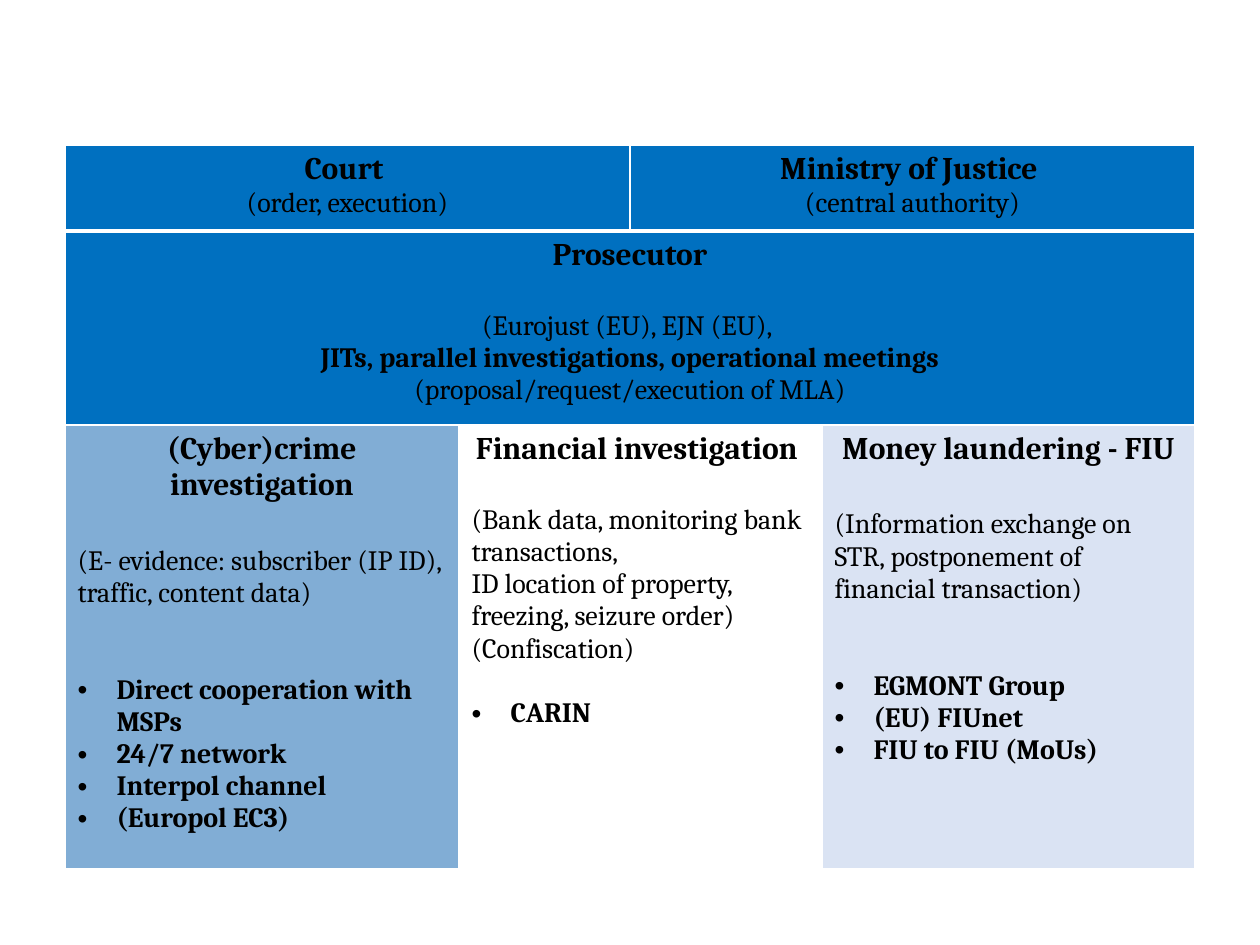
from dataclasses import dataclass

from lxml import etree
from pptx import Presentation
from pptx.dml.color import RGBColor
from pptx.enum.text import PP_ALIGN
from pptx.oxml.ns import qn
from pptx.table import _Cell
from pptx.util import Pt

CENTER, LEFT = PP_ALIGN.CENTER, PP_ALIGN.LEFT
EMU_PER_PX = 914400 / 126
FONT = "Cambria"
BLACK, WHITE = "000000", "FFFFFF"
BLUE, MID_BLUE, PALE_BLUE = "0070C0", "81ADD5", "DAE3F3"
BULLET_INDENT = 39

TABLE_LEFT, TABLE_TOP = 65, 145
COLUMN_WIDTHS = [394, 171, 192, 373]
ROW_HEIGHTS = [86, 194, 444]


@dataclass(frozen=True)
class Line:
    text: str
    size: int = 16
    bold: bool = False
    align: PP_ALIGN = LEFT
    bullet: bool = False
    before: float = 0


@dataclass(frozen=True)
class Block:
    row: int
    first_column: int
    last_column: int
    fill: str | None
    lines: list[Line]


def heading(text: str) -> Line:
    return Line(text, 18, True, CENTER)


def centered(text: str, bold: bool = False, before: float = 0) -> Line:
    return Line(text, bold=bold, align=CENTER, before=before)


def bullet(text: str, before: float = 0) -> Line:
    return Line(text, bold=True, bullet=True, before=before)


BLOCKS = [
    Block(0, 0, 1, BLUE, [heading("Court "), centered("(order, execution)")]),
    Block(0, 2, 3, BLUE, [
        heading("Ministry of Justice "),
        centered("(central authority)"),
    ]),
    Block(1, 0, 3, BLUE, [
        heading("Prosecutor"),
        centered("(Eurojust (EU), EJN (EU), ", before=21),
        centered("JITs, parallel investigations, operational meetings", bold=True),
        centered("(proposal/request/execution of MLA)"),
    ]),
    Block(2, 0, 0, MID_BLUE, [
        heading("(Cyber)crime investigation"),
        Line("(E- evidence: subscriber (IP ID), traffic, content data)", before=23.5),
        bullet("Direct cooperation with MSPs", before=37),
        bullet("24/7 network"),
        bullet("Interpol channel"),
        bullet("(Europol EC3)"),
    ]),
    Block(2, 1, 2, None, [
        heading("Financial investigation "),
        Line("(Bank data, monitoring bank transactions,", before=21),
        Line("ID location of property,"),
        Line("freezing, seizure order)"),
        Line("(Confiscation)"),
        bullet("CARIN", before=18.5),
    ]),
    Block(2, 3, 3, PALE_BLUE, [
        heading("Money laundering - FIU"),
        Line("(Information exchange on STR, postponement of financial transaction)",
             before=23.5),
        bullet("EGMONT Group", before=37),
        bullet("(EU) FIUnet"),
        bullet("FIU to FIU (MoUs)"),
    ]),
]


def px(length: int) -> int:
    return round(length * EMU_PER_PX)


def color(value: str) -> RGBColor:
    return RGBColor.from_string(value)


def add_borders(cell: _Cell, row: int) -> None:
    """Draw thin white borders, with a thick rule under the first row."""
    widths = {"lnL": 1, "lnR": 1, "lnT": 3 if row == 1 else 1, "lnB": 3 if row == 0 else 1}
    properties = cell._tc.get_or_add_tcPr()
    for side, width in widths.items():
        border = etree.SubElement(properties, qn(f"a:{side}"), w=str(Pt(width)))
        solid = etree.SubElement(border, qn("a:solidFill"))
        etree.SubElement(solid, qn("a:srgbClr"), val=WHITE)


def add_bullet(paragraph) -> None:
    properties = paragraph._p.get_or_add_pPr()
    properties.set("marL", str(px(BULLET_INDENT)))
    properties.set("indent", str(-px(BULLET_INDENT)))
    etree.SubElement(properties, qn("a:buFont"), typeface="Arial")
    etree.SubElement(properties, qn("a:buChar"), char="•")


def write_line(paragraph, line: Line) -> None:
    if line.bullet:
        add_bullet(paragraph)
    paragraph.alignment = line.align
    if line.before:
        paragraph.space_before = Pt(line.before)
    run = paragraph.add_run()
    run.text = line.text
    formats = {"name": FONT, "size": Pt(line.size), "bold": line.bold}
    for attribute, value in formats.items():
        setattr(run.font, attribute, value)
    run.font.color.rgb = color(BLACK)


def fill_block(table, block: Block) -> None:
    cell = table.cell(block.row, block.first_column)
    if block.last_column > block.first_column:
        cell.merge(table.cell(block.row, block.last_column))
    for column in range(block.first_column, block.last_column + 1):
        part = table.cell(block.row, column)
        add_borders(part, block.row)
        if block.fill:
            part.fill.solid()
            part.fill.fore_color.rgb = color(block.fill)
        else:
            part.fill.background()
    frame = cell.text_frame
    for index, line in enumerate(block.lines):
        write_line(frame.add_paragraph() if index else frame.paragraphs[0], line)


def main() -> None:
    presentation = Presentation()
    presentation.slide_width, presentation.slide_height = px(1260), px(945)
    slide = presentation.slides.add_slide(presentation.slide_layouts[6])
    table = slide.shapes.add_table(
        len(ROW_HEIGHTS), len(COLUMN_WIDTHS), px(TABLE_LEFT), px(TABLE_TOP),
        px(sum(COLUMN_WIDTHS)), px(sum(ROW_HEIGHTS)),
    ).table
    for column, width in zip(table.columns, COLUMN_WIDTHS):
        column.width = px(width)
    for row, height in zip(table.rows, ROW_HEIGHTS):
        row.height = px(height)
    for block in BLOCKS:
        fill_block(table, block)
    presentation.save("out.pptx")


if __name__ == "__main__":
    main()
